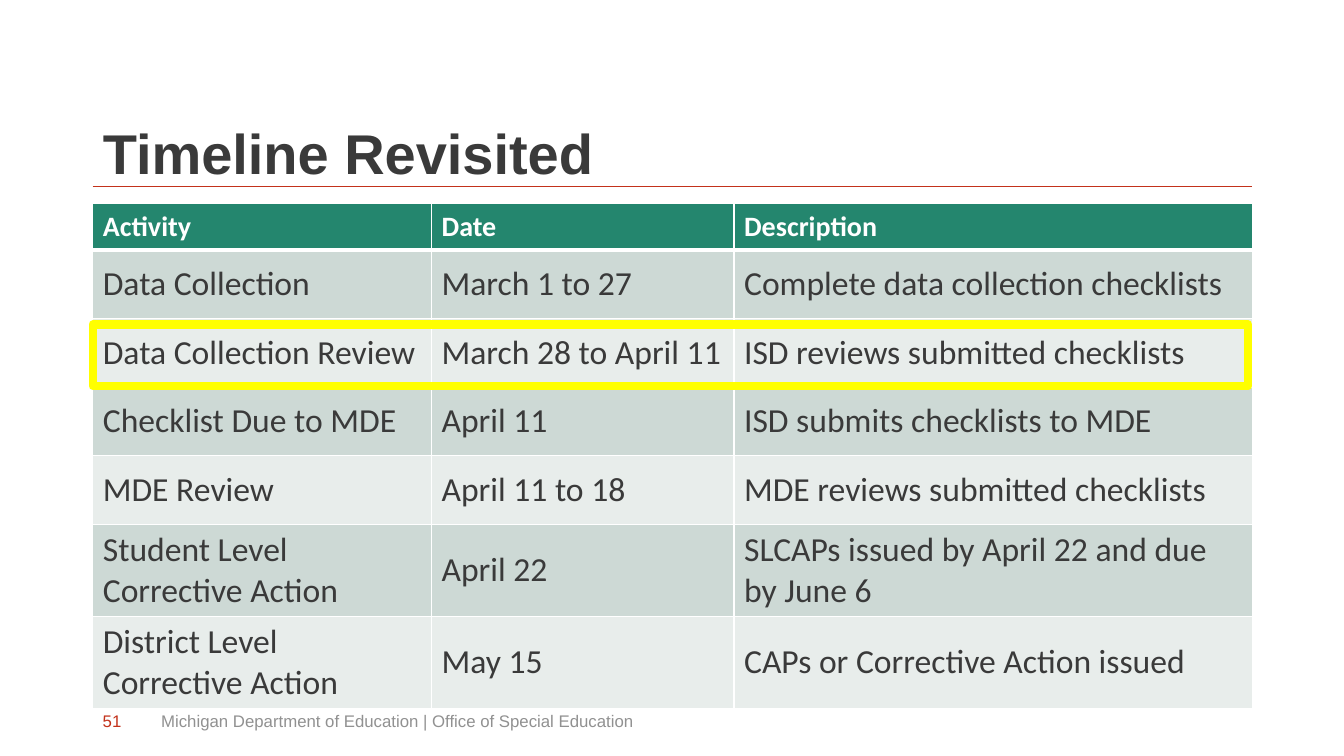
from lxml import etree
from pptx import Presentation
from pptx import util as u
from pptx.dml.color import RGBColor
from pptx.enum import shapes, text
from pptx.oxml import ns

INK = RGBColor(0x3A, 0x3A, 0x3A)
WHITE = RGBColor(0xFF, 0xFF, 0xFF)
GREEN = RGBColor(0x24, 0x86, 0x6E)
DARK = RGBColor(0xCD, 0xD9, 0xD5)
LIGHT = RGBColor(0xE8, 0xED, 0xEB)
RED = RGBColor(0xC3, 0x32, 0x1B)
GRAY = RGBColor(0x91, 0x91, 0x91)
YELLOW = RGBColor(0xFF, 0xFF, 0x00)

LEFT, WIDTH, TOP = 0.92, 11.5, 2.02
COLS = [3.36, 3, 5.14]
ROWS = [0.46] + [0.68] * 4 + [0.88] * 2
STEPS = [
    ("Activity", "Date", "Description"),
    ("Data Collection", "March 1 to 27", "Complete data collection checklists"),
    ("Data Collection Review", "March 28 to April 11", "ISD reviews submitted checklists"),
    ("Checklist Due to MDE", "April 11", "ISD submits checklists to MDE"),
    ("MDE Review", "April 11 to 18", "MDE reviews submitted checklists"),
    ("Student Level Corrective Action", "April 22", "SLCAPs issued by April 22 and due by June 6"),
    ("District Level Corrective Action", "May 15", "CAPs or Corrective Action issued"),
]


def write(frame, words, size, face, color, bold=False):
    run = frame.paragraphs[0].add_run()
    run.text = words
    font = run.font
    font.size, font.name, font.bold = u.Pt(size), face, bold
    font.color.rgb = color


def edge(cell, widths):
    """Draw white cell borders; widths maps each side (L, R, T, B) to points."""
    for spot, (side, width) in enumerate(widths.items()):
        line = etree.Element(ns.qn("a:ln" + side), w=str(u.Pt(width)))
        fill = etree.SubElement(line, ns.qn("a:solidFill"))
        etree.SubElement(fill, ns.qn("a:srgbClr"), val=str(WHITE))
        cell._tc.get_or_add_tcPr().insert(spot, line)


deck = Presentation()
deck.slide_width, deck.slide_height = u.Inches(13.33), u.Inches(7.5)
slide = deck.slides.add_slide(deck.slide_layouts[5])

# Title and rule
title = slide.shapes.title
title.left, title.top = u.Inches(LEFT), u.Inches(0.4)
title.width, title.height = u.Inches(WIDTH), u.Inches(1.5)
frame = title.text_frame
frame.vertical_anchor = text.MSO_ANCHOR.BOTTOM
frame.paragraphs[0].alignment = text.PP_ALIGN.LEFT
frame.paragraphs[0].line_spacing = 0.9
write(frame, "Timeline Revisited", 40, "Arial", INK, True)

rule = slide.shapes.add_connector(
    shapes.MSO_CONNECTOR.STRAIGHT,
    u.Inches(LEFT), u.Inches(1.85), u.Inches(LEFT + WIDTH), u.Inches(1.85))
rule.line.color.rgb, rule.line.width = RED, u.Pt(0.5)
etree.SubElement(rule._element.spPr, ns.qn("a:effectLst"))

# Timeline table
table = slide.shapes.add_table(
    len(ROWS), len(COLS), u.Inches(LEFT), u.Inches(TOP),
    u.Inches(WIDTH), u.Inches(sum(ROWS))).table
for col, width in zip(table.columns, COLS):
    col.width = u.Inches(width)
for r, (step, height) in enumerate(zip(STEPS, ROWS)):
    table.rows[r].height = u.Inches(height)
    head = r == 0
    for c, words in enumerate(step):
        cell = table.cell(r, c)
        cell.vertical_anchor = text.MSO_ANCHOR.MIDDLE
        cell.fill.solid()
        cell.fill.fore_color.rgb = GREEN if head else DARK if r % 2 else LIGHT
        edge(cell, {"L": 1, "R": 1, "T": 3 if r == 1 else 1, "B": 3 if head else 1})
        write(cell.text_frame, words, 20 if head else 24, "Calibri",
              WHITE if head else INK, head)

# Frame around the current step
mark = slide.shapes.add_shape(
    shapes.MSO_SHAPE.RECTANGLE, u.Inches(LEFT), u.Inches(3.22), u.Inches(11.46), u.Inches(0.61))
mark.shadow.inherit = False
mark.fill.background()
mark.line.color.rgb, mark.line.width = YELLOW, u.Pt(6)

# Footer
for left, width, words, color in [
    (LEFT, 0.45, "51", RED),
    (1.5, 8.39, "Michigan Department of Education | Office of Special Education", GRAY),
]:
    box = slide.shapes.add_textbox(u.Inches(left), u.Inches(6.95), u.Inches(width), u.Inches(0.4))
    box.text_frame.word_wrap = True
    box.text_frame.vertical_anchor = text.MSO_ANCHOR.MIDDLE
    write(box.text_frame, words, 12, "Arial", color)

deck.save("out.pptx")
